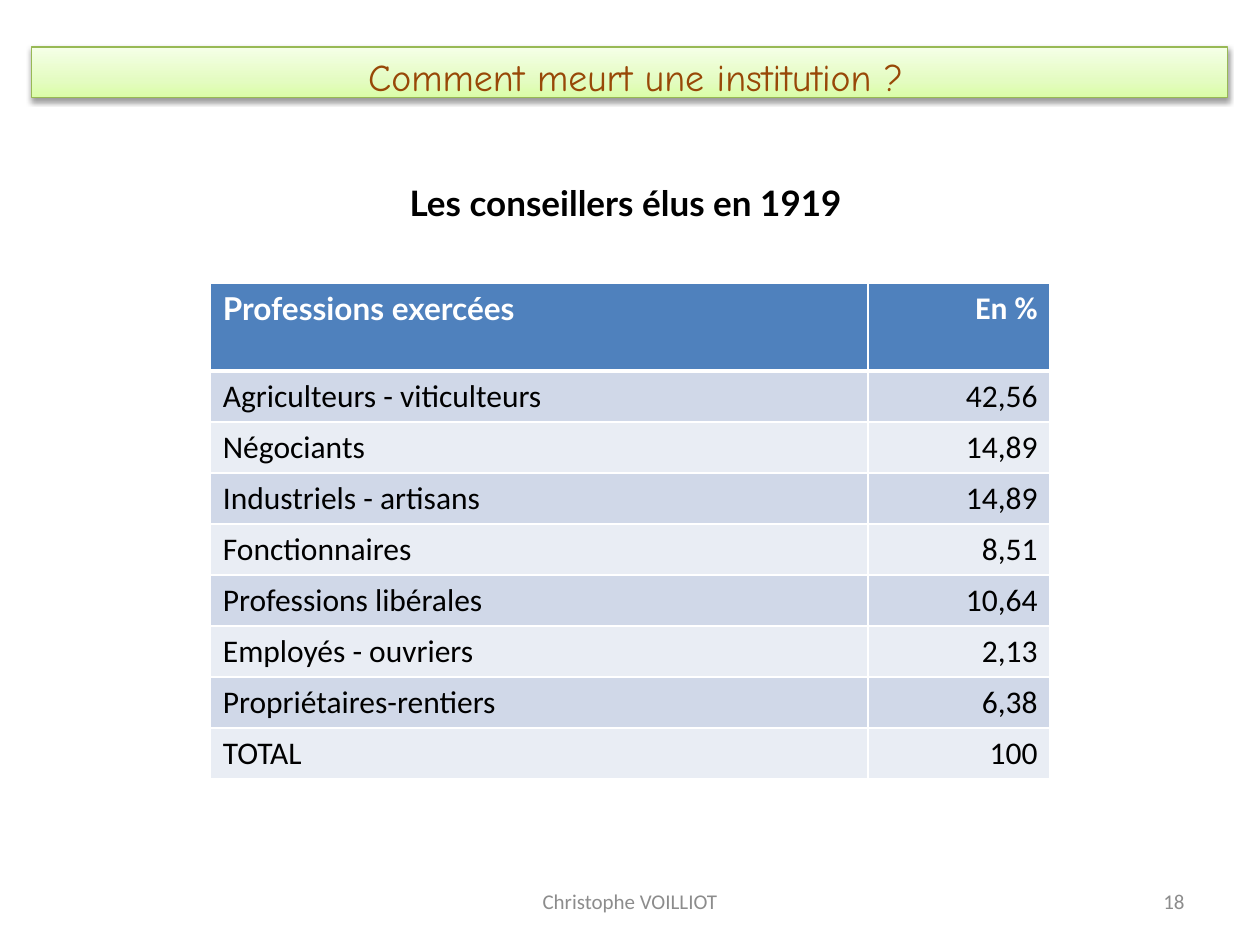
from copy import deepcopy

from lxml.etree import SubElement
from pptx import Presentation
from pptx.dml.color import RGBColor
from pptx.enum.text import MSO_ANCHOR, MSO_AUTO_SIZE, PP_ALIGN
from pptx.oxml import parse_xml
from pptx.oxml.ns import nsdecls, qn
from pptx.util import Cm, Pt

WHITE = RGBColor(0xFF, 0xFF, 0xFF)
BLACK = RGBColor(0x00, 0x00, 0x00)
GREY = RGBColor(0x8C, 0x8C, 0x8C)
BROWN = RGBColor(0x98, 0x48, 0x07)
GREEN_LINE = RGBColor(0x98, 0xB9, 0x55)
HEADER_BLUE = RGBColor(0x4F, 0x81, 0xBD)
BANDS = (RGBColor(0xD0, 0xD8, 0xE8), RGBColor(0xE9, 0xED, 0xF4))
GREENS = (
    (0, RGBColor(0xDA, 0xFD, 0xA7)),
    (0.35, RGBColor(0xE4, 0xFC, 0xC2)),
    (1, RGBColor(0xF5, 0xFF, 0xE7)),
)
ROWS = (
    ("Professions exercées", "En %"),
    ("Agriculteurs - viticulteurs", "42,56"),
    ("Négociants", "14,89"),
    ("Industriels - artisans", "14,89"),
    ("Fonctionnaires", "8,51"),
    ("Professions libérales", "10,64"),
    ("Employés - ouvriers", "2,13"),
    ("Propriétaires-rentiers", "6,38"),
    ("TOTAL", "100"),
)


def place(shape, box):
    """Move a shape to a box of left, top, width and height."""
    shape.left, shape.top, shape.width, shape.height = box


def write(frame, text, font, size, color, align, bold=False):
    """Set one formatted paragraph in a text frame."""
    frame.text = text
    para = frame.paragraphs[0]
    para.alignment = align
    for span in para.runs:
        span.font.name = font
        span.font.size = Pt(size)
        span.font.bold = bold
        span.font.color.rgb = color
    return para


def add_soft_shadow(shape):
    """Give a shape a blurred shadow that falls straight down."""
    shape._element.spPr.append(parse_xml(
        f'<a:effectLst {nsdecls("a")}>'
        f'<a:outerShdw blurRad="{Pt(3.1)}" dist="{Pt(1.6)}" dir="5400000" rotWithShape="0">'
        '<a:srgbClr val="000000"><a:alpha val="38000"/></a:srgbClr>'
        '</a:outerShdw></a:effectLst>'))


def build_title(page, box):
    """Place the title on its green banner."""
    title = page.shapes.title
    place(title, box)
    title.fill.gradient()
    title.fill.gradient_angle = 90
    stop_list = title._element.spPr.find(qn("a:gradFill")).find(qn("a:gsLst"))
    stop_list.append(deepcopy(stop_list[-1]))
    for stop, (position, color) in zip(title.fill.gradient_stops, GREENS):
        stop.position = position
        stop.color.rgb = color
    title.line.color.rgb = GREEN_LINE
    title.line.width = Pt(0.75)
    add_soft_shadow(title)
    frame = title.text_frame
    write(frame, " Comment meurt une institution ?", "Comic Neue", 21.6, BROWN, PP_ALIGN.CENTER)
    frame.vertical_anchor = MSO_ANCHOR.TOP
    frame.auto_size = MSO_AUTO_SIZE.NONE


def build_heading(page, box):
    """Place the heading of the table in the body placeholder."""
    body = page.placeholders[1]
    place(body, box)
    body.text_frame.auto_size = MSO_AUTO_SIZE.NONE
    para = write(body.text_frame, "Les conseillers élus en 1919 ", "Lato", 20, BLACK,
                 PP_ALIGN.CENTER, bold=True)
    para.space_before = Pt(4)
    properties = para._p.get_or_add_pPr()
    properties.set("marL", "0")
    properties.set("indent", "0")
    SubElement(properties, qn("a:buNone"))


def add_borders(cell, bottom_width):
    """Draw white borders round a table cell."""
    properties = cell._tc.get_or_add_tcPr()
    for side, width in (("L", 1), ("R", 1), ("T", 1), ("B", bottom_width)):
        line = SubElement(properties, qn(f"a:ln{side}"), w=str(Pt(width)))
        fill = SubElement(line, qn("a:solidFill"))
        SubElement(fill, qn("a:srgbClr"), val=str(WHITE))


def build_table(page, box):
    """Place the table of professions, with a taller header row."""
    left, top, width, height = box
    table = page.shapes.add_table(len(ROWS), 2, left, top, width, height).table
    table.columns[1].width = Cm(3.67)
    table.columns[0].width = width - Cm(3.67)
    header_height = Cm(1.78)
    row_height = (height - header_height) // (len(ROWS) - 1)
    for index, values in enumerate(ROWS):
        header = index == 0
        table.rows[index].height = header_height if header else row_height
        for column, value in enumerate(values):
            cell = table.cell(index, column)
            add_borders(cell, 3 if header else 1)
            cell.fill.solid()
            cell.fill.fore_color.rgb = HEADER_BLUE if header else BANDS[(index - 1) % 2]
            write(cell.text_frame, value,
                  "Lato" if header and column == 0 else "Calibri", 18,
                  WHITE if header else BLACK,
                  PP_ALIGN.RIGHT if column else PP_ALIGN.LEFT, bold=header)


def build_footer(page, box, text, align):
    """Place one grey footer text."""
    frame = page.shapes.add_textbox(*box).text_frame
    frame.word_wrap = True
    frame.vertical_anchor = MSO_ANCHOR.MIDDLE
    write(frame, text, "Calibri", 12, GREY, align)


def main():
    """Build the deck and save it."""
    deck = Presentation()
    deck.slide_width, deck.slide_height = Cm(25.4), Cm(19.05)
    page = deck.slides.add_slide(deck.slide_layouts[1])
    build_title(page, (Cm(0.64), Cm(0.95), Cm(24.1), Cm(1.02)))
    build_heading(page, (Cm(1.27), Cm(3.53), Cm(22.86), Cm(12.57)))
    build_footer(page, (Cm(8.68), Cm(17.66), Cm(8.04), Cm(1.01)),
                 "Christophe VOILLIOT", PP_ALIGN.CENTER)
    build_footer(page, (Cm(18.2), Cm(17.66), Cm(5.93), Cm(1.01)), "18", PP_ALIGN.RIGHT)
    build_table(page, (Cm(4.24), Cm(5.7), Cm(16.93), Cm(10.01)))
    deck.save("out.pptx")


if __name__ == "__main__":
    main()
